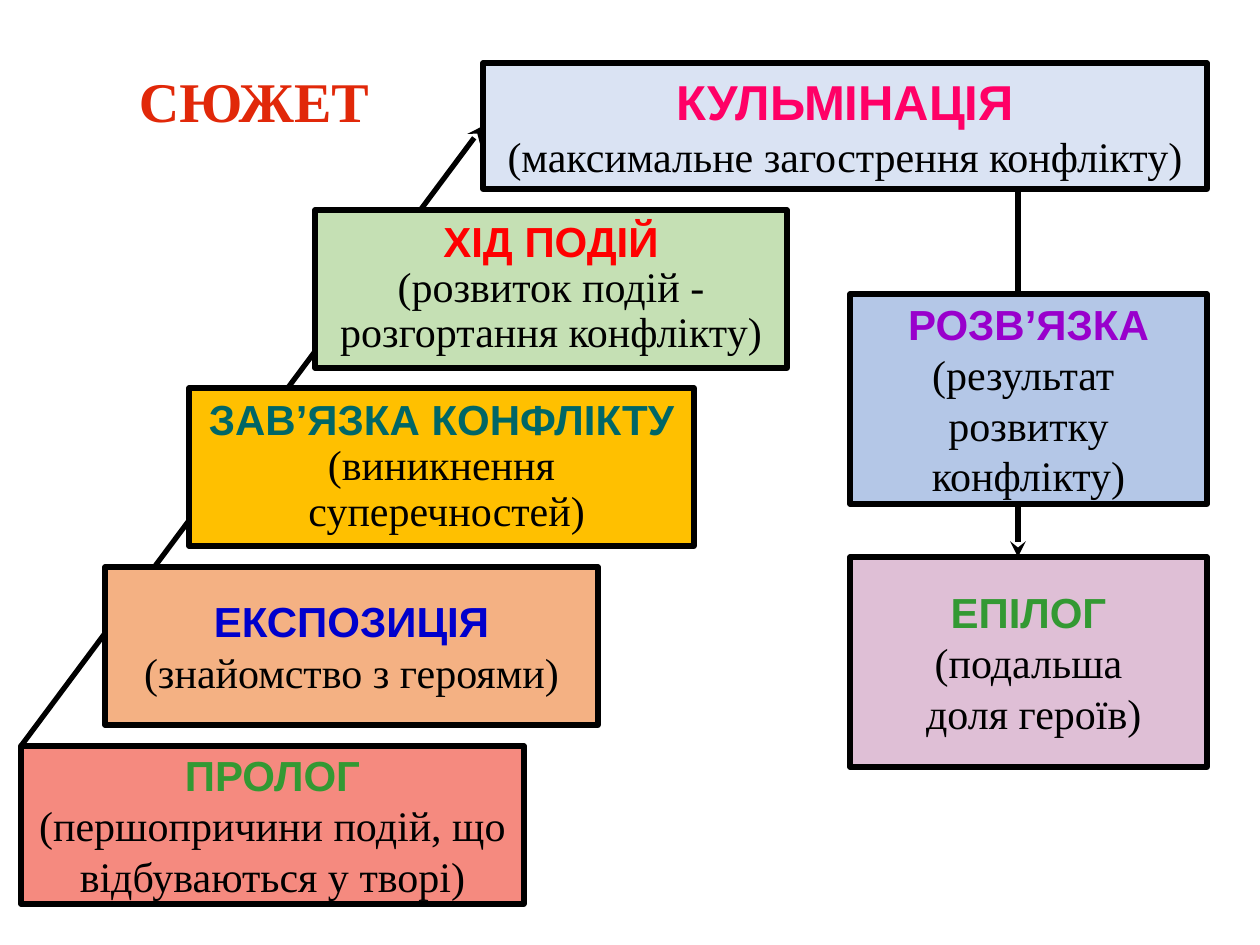
from dataclasses import dataclass

from lxml.etree import SubElement
from pptx import Presentation
from pptx.dml.color import RGBColor
from pptx.enum.shapes import MSO_CONNECTOR, MSO_SHAPE
from pptx.enum.text import MSO_ANCHOR, MSO_AUTO_SIZE, PP_ALIGN
from pptx.oxml.ns import qn
from pptx.util import Emu, Pt

PX_PER_INCH = 126


@dataclass(frozen=True)
class Theme:
    heading_font: str = "Arial"
    body_font: str = "Times New Roman"
    ink: str = "000000"
    title_color: str = "E12809"
    title_size: int = 32
    peak_size: int = 28
    text_size: int = 24
    line_width: int = 3


THEME = Theme()

# Stage: left, top, width, height, fill, heading colour, heading, lines below
CLIMAX = (483, 63, 724, 126, "DAE3F3", "FF0066", "КУЛЬМІНАЦІЯ",
          ["(максимальне загострення конфлікту)"])
EPILOGUE = (850, 557, 357, 210, "DFBFD6", "339933", "ЕПІЛОГ",
            ["(подальша", " доля героїв)"])
PROLOGUE = (21, 746, 503, 158, "F58A7F", "339933", "ПРОЛОГ",
            ["(першопричини подій, що", "відбуваються у творі)"])
RISING_ACTION = (315, 210, 472, 158, "C5E0B4", "FF0000", "ХІД ПОДІЙ",
                 ["(розвиток подій -", "розгортання конфлікту)"])
CONFLICT = (189, 388, 505, 158, "FFC000", "006666", "ЗАВ’ЯЗКА КОНФЛІКТУ",
            ["(виникнення", " суперечностей)"])
EXPOSITION = (105, 567, 493, 158, "F4B183", "0000CC", "ЕКСПОЗИЦІЯ",
              ["(знайомство з героями)"])
RESOLUTION = (850, 294, 357, 210, "B4C7E7", "9900CC", "РОЗВ’ЯЗКА",
              ["(результат ", "розвитку", "конфлікту)"])


def px(count):
    return Emu(round(count * 914400 / PX_PER_INCH))


def color(code):
    return RGBColor.from_string(code)


def style_font(font, name, size, code, bold=False):
    font.name = name
    font.size = Pt(size)
    font.bold = bold
    font.color.rgb = color(code)


def style_line(line):
    line.color.rgb = color(THEME.ink)
    line.width = Pt(THEME.line_width)


def set_title(page, text):
    title = page.shapes.title
    title.left, title.top, title.width, title.height = map(px, (0, 0, 1260, 140))
    frame = title.text_frame
    frame.text = text
    frame.auto_size = MSO_AUTO_SIZE.NONE
    frame.vertical_anchor = MSO_ANCHOR.BOTTOM
    frame.margin_left = px(139)
    para = frame.paragraphs[0]
    para.alignment = PP_ALIGN.LEFT
    style_font(para.font, THEME.body_font, THEME.title_size, THEME.title_color, True)


def add_stage(page, stage, heading_size=THEME.text_size, spacing=None):
    left, top, width, height, fill, heading_color, heading, lines = stage
    box = page.shapes.add_shape(MSO_SHAPE.RECTANGLE, px(left), px(top), px(width), px(height))
    box.shadow.inherit = False
    box.fill.solid()
    box.fill.fore_color.rgb = color(fill)
    style_line(box.line)

    frame = box.text_frame
    frame.word_wrap = False
    frame.vertical_anchor = MSO_ANCHOR.MIDDLE
    for index, text in enumerate([heading, *lines]):
        para = frame.add_paragraph() if index else frame.paragraphs[0]
        para.text = text
        para.alignment = PP_ALIGN.CENTER
        if spacing:
            para.line_spacing = spacing
        if index:
            style_font(para.font, THEME.body_font, THEME.text_size, THEME.ink)
        else:
            style_font(para.font, THEME.heading_font, heading_size, heading_color, True)
    return box


def add_arrow(page, start, end):
    arrow = page.shapes.add_connector(MSO_CONNECTOR.STRAIGHT, *map(px, (*start, *end)))
    style_line(arrow.line)
    SubElement(arrow.line._get_or_add_ln(), qn("a:tailEnd"), type="stealth")
    SubElement(arrow._element.spPr, qn("a:effectLst"))
    return arrow


def main():
    deck = Presentation()
    deck.slide_width, deck.slide_height = px(1260), px(945)
    page = deck.slides.add_slide(deck.slide_layouts[5])
    set_title(page, "СЮЖЕТ")

    # Ends of the two plot lines
    climax = add_stage(page, CLIMAX, heading_size=THEME.peak_size)
    add_stage(page, EPILOGUE)
    add_stage(page, PROLOGUE)

    # Rise to the climax, then fall to the epilogue
    rise = add_arrow(page, (21, 746), (483, 126))
    rise.end_connect(climax, 1)
    add_arrow(page, (1018, 189), (1018, 557))

    # Stages lying over the lines
    add_stage(page, RISING_ACTION, spacing=0.9)
    add_stage(page, CONFLICT, spacing=0.9)
    add_stage(page, EXPOSITION)
    add_stage(page, RESOLUTION)

    deck.save("out.pptx")


if __name__ == "__main__":
    main()
